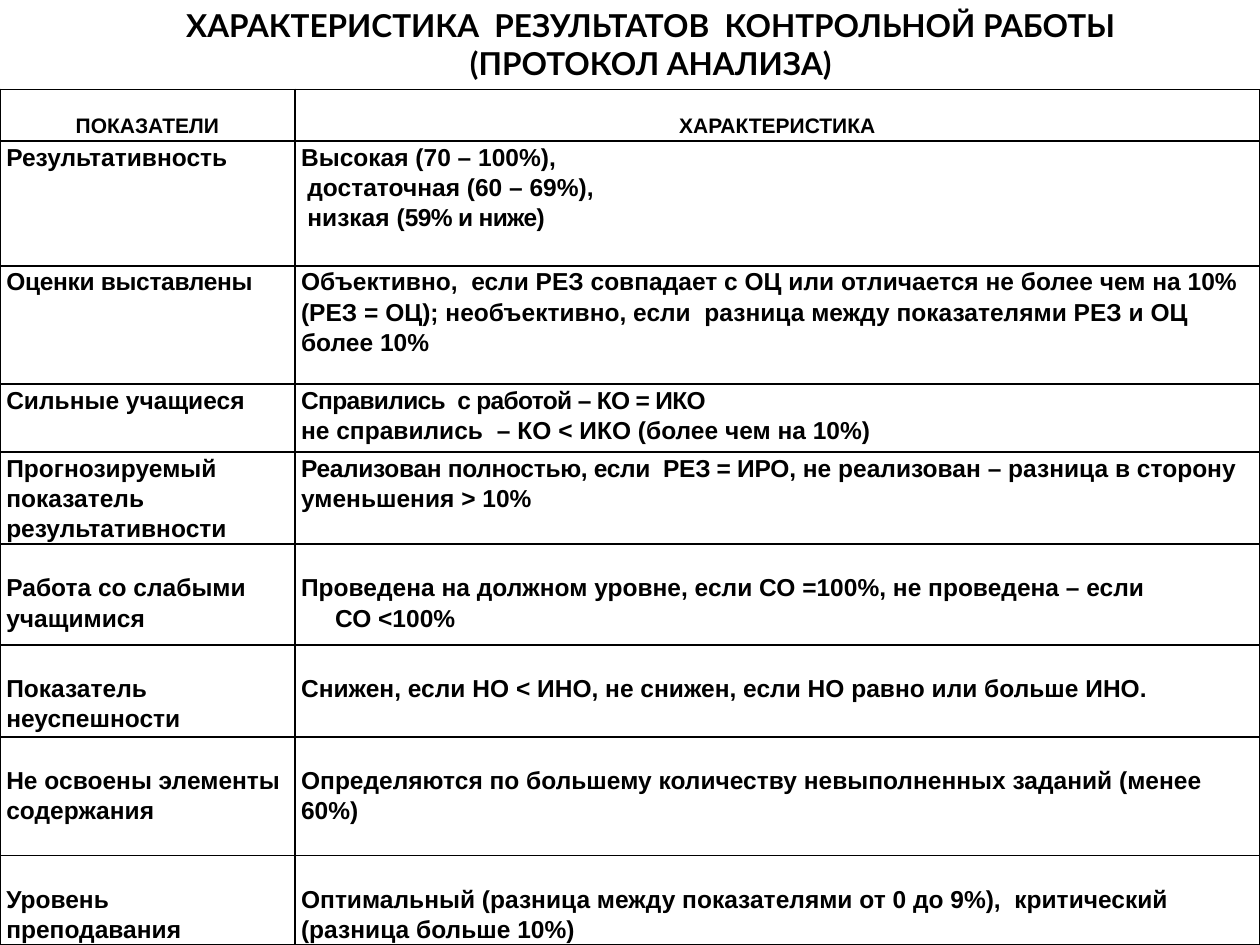
import lxml.etree
import pptx
import pptx.dml.color
import pptx.enum.text
import pptx.oxml.ns
import pptx.util

Inches = pptx.util.Inches
Pt = pptx.util.Pt
ALIGN = pptx.enum.text.PP_ALIGN
TITLE_ONLY = 5

HEADERS = ["ПОКАЗАТЕЛИ", "ХАРАКТЕРИСТИКА"]
COLUMN_WIDTHS = [2.34, 7.66]
HEADER_HEIGHT, HEADER_GAP = 0.41, 0.18
ROW_GAP = 0.22

# Row height, space above the text, indicator, description.
# Each cell is a list of paragraphs: (left indent, [(text, letter spacing in points), ...]).
ROWS = [
    (0.99, 0, [(0, [("Результативность", 0)])],
     [(0, [("Высокая (70 – 100%),", 0)]),
      (0.05, [("достаточная (60 – 69%),", 0)]),
      (0.05, [("низкая (", 0), ("59% и ниже)", -0.4)])]),
    (0.94, 0, [(0, [("Оценки выставлены", -0.2)])],
     [(0, [("Объективно,  если РЕЗ совпадает с ОЦ или отличается не более чем на 10% "
            "(РЕЗ = ОЦ); необъективно, если  разница между показателями РЕЗ и ОЦ "
            "более 10%", 0)])]),
    (0.54, 0, [(0, [("Сильные учащиеся", 0)])],
     [(0, [("Справились  с работой – КО = ИКО", -0.4)]),
      (0, [("не справились  ", 0), ("–", -0.4), (" КО < ИКО (более чем на 10%)", 0)])]),
    (0.73, 0, [(0, [("Прогнозируемый показатель  результативности", 0)])],
     [(0, [("Реализован полностью, если  РЕЗ = ИРО", -0.2),
           (", не реализован – разница в сторону уменьшения > 10%", 0)])]),
    (0.8, ROW_GAP, [(0, [("Работа со слабыми учащимися", 0)])],
     [(0, [("Проведена на должном уровне, если СО =100%, не проведена – если", 0)]),
      (0.27, [("СО <100%", 0)])]),
    (0.73, ROW_GAP, [(0, [("Показатель неуспешности", 0)])],
     [(0, [("Снижен, если НО < ИНО, не снижен, если НО равно или больше ИНО.", 0)])]),
    (0.94, ROW_GAP, [(0, [("Не освоены элементы содержания", 0)])],
     [(0, [("Определяются по большему количеству невыполненных заданий (менее 60%)", 0)])]),
    (0.71, ROW_GAP, [(0, [("Уровень преподавания", 0)])],
     [(0, [("Оптимальный (разница между показателями от 0 до 9%),  критический "
            "(разница больше 10%)", 0)])]),
]


def color(value):
    return pptx.dml.color.RGBColor.from_string(value)


class ProtocolPage:
    ink, paper = "000000", "FFFFFF"
    title_font, table_font = "Lato", "Arial"
    title_size, header_size, body_size = 18, 12, 14
    line_spacing = 1.1
    border_width = 1

    def __init__(self, deck):
        self.page = deck.slides.add_slide(deck.slide_layouts[TITLE_ONLY])

    def add_span(self, para, text, font, size, spacing=0):
        span = para.add_run()
        span.text = text
        span.font.name = font
        span.font.size = Pt(size)
        span.font.bold = True
        span.font.color.rgb = color(self.ink)
        if spacing:
            span.font._element.set("spc", str(round(spacing * 100)))

    def add_title(self, lines, left, top, width, height):
        box = self.page.shapes.title
        box.left, box.top = Inches(left), Inches(top)
        box.width, box.height = Inches(width), Inches(height)
        frame = box.text_frame
        frame.word_wrap = True
        frame.auto_size = pptx.enum.text.MSO_AUTO_SIZE.NONE
        frame.vertical_anchor = pptx.enum.text.MSO_ANCHOR.TOP
        frame.margin_top = Inches(0.05)
        for number, line in enumerate(lines):
            para = frame.add_paragraph() if number else frame.paragraphs[0]
            para.alignment = ALIGN.CENTER
            self.add_span(para, line, self.title_font, self.title_size)

    def add_borders(self, cell):
        properties = cell._tc.get_or_add_tcPr()
        qn = pptx.oxml.ns.qn
        for side in ("lnL", "lnR", "lnT", "lnB"):
            line = lxml.etree.SubElement(properties, qn(f"a:{side}"), w=str(Pt(self.border_width)))
            fill = lxml.etree.SubElement(line, qn("a:solidFill"))
            lxml.etree.SubElement(fill, qn("a:srgbClr"), val=self.ink)

    def fill_cell(self, cell, paragraphs, gap, size, alignment):
        self.add_borders(cell)
        cell.fill.solid()
        cell.fill.fore_color.rgb = color(self.paper)
        cell.margin_left = cell.margin_right = Inches(0.05)
        cell.margin_top, cell.margin_bottom = Inches(gap), 0
        frame = cell.text_frame
        for number, (indent, spans) in enumerate(paragraphs):
            para = frame.add_paragraph() if number else frame.paragraphs[0]
            para.alignment = alignment
            para.line_spacing = self.line_spacing
            if indent:
                para._p.get_or_add_pPr().set("marL", str(Inches(indent)))
            for text, spacing in spans:
                self.add_span(para, text, self.table_font, size, spacing)

    def add_table(self, left, top):
        heights = [HEADER_HEIGHT] + [row[0] for row in ROWS]
        table = self.page.shapes.add_table(
            len(heights), len(COLUMN_WIDTHS), Inches(left), Inches(top),
            Inches(sum(COLUMN_WIDTHS)), Inches(sum(heights))).table
        table.first_row = table.horz_banding = False
        for column, width in zip(table.columns, COLUMN_WIDTHS):
            column.width = Inches(width)
        for row, height in zip(table.rows, heights):
            row.height = Inches(height)
        for column, header in enumerate(HEADERS):
            self.fill_cell(table.cell(0, column), [(0, [(header, 0)])],
                           HEADER_GAP, self.header_size, ALIGN.CENTER)
        for number, (_, gap, *cells) in enumerate(ROWS, start=1):
            for column, paragraphs in enumerate(cells):
                self.fill_cell(table.cell(number, column), paragraphs,
                               gap, self.body_size, ALIGN.LEFT)


def main():
    deck = pptx.Presentation()
    deck.slide_width, deck.slide_height = Inches(10), Inches(7.5)
    protocol = ProtocolPage(deck)
    protocol.add_title(["ХАРАКТЕРИСТИКА  РЕЗУЛЬТАТОВ  КОНТРОЛЬНОЙ РАБОТЫ",
                        "(ПРОТОКОЛ АНАЛИЗА)"], 1.09, 0, 8.15, 1.38)
    protocol.add_table(0, 0.71)
    deck.save("out.pptx")


if __name__ == "__main__":
    main()
